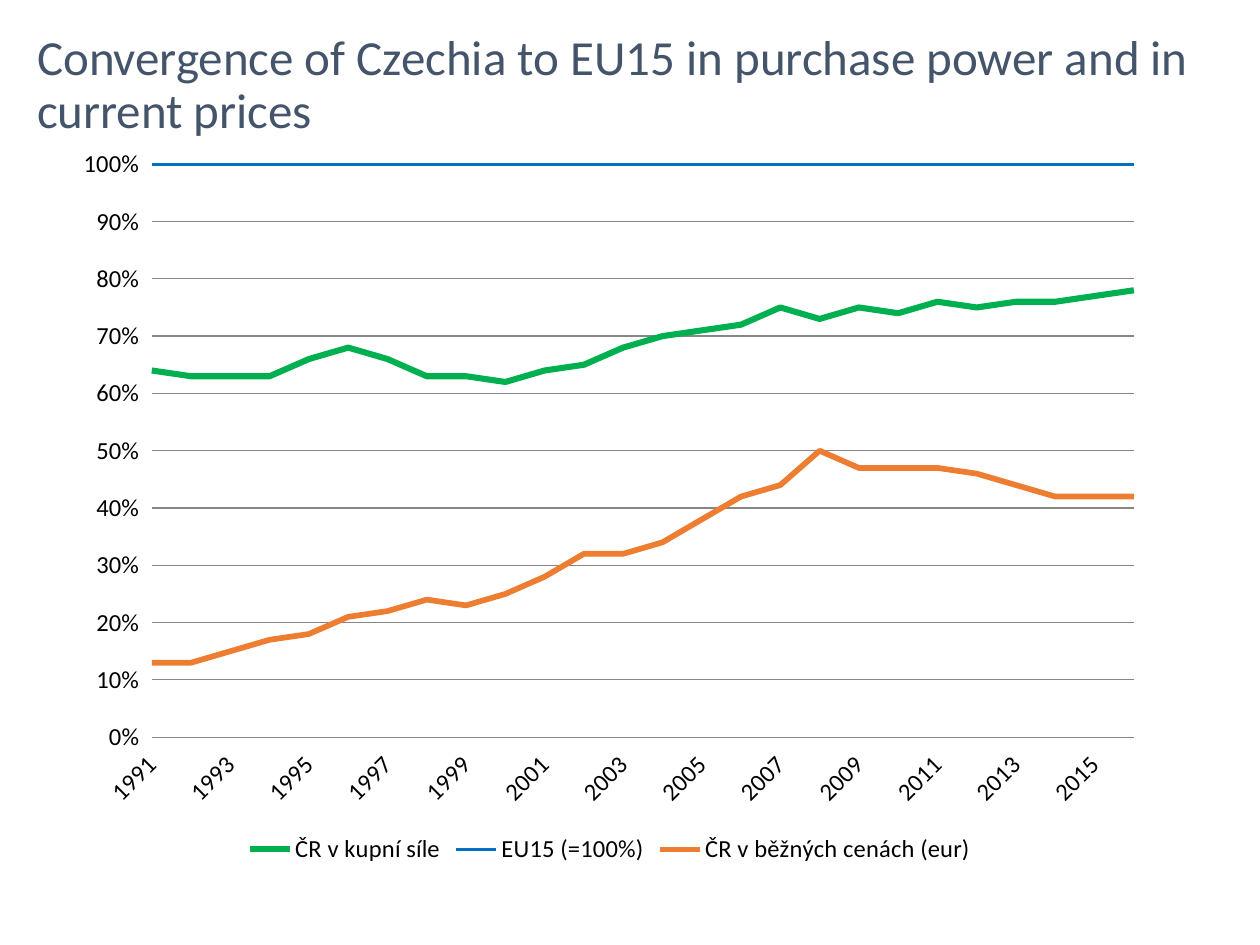
from pptx import Presentation
from pptx.chart.data import CategoryChartData
from pptx.dml.color import RGBColor as RGB
from pptx.enum.chart import XL_CHART_TYPE as CT, XL_LEGEND_POSITION as LP, XL_TICK_MARK as TM
from pptx.enum.text import MSO_ANCHOR
from pptx.oxml import parse_xml
from pptx.oxml.ns import nsdecls, qn
from pptx.util import Cm, Pt

# Content
TITLE = "Convergence of Czechia to EU15 in purchase power and in current prices"
YEARS = [str(y) for y in range(1991, 2017)]
# name, colour key, line width in points, share of EU15 in percent
SERIES = [
    ("ČR v kupní síle", "power", 3.5,
     [64, 63, 63, 63, 66, 68, 66, 63, 63, 62, 64, 65, 68,
      70, 71, 72, 75, 73, 75, 74, 76, 75, 76, 76, 77, 78]),
    ("EU15 (=100%)", "eu", 1.5, [100] * len(YEARS)),
    ("ČR v běžných cenách (eur)", "prices", 3.25,
     [13, 13, 15, 17, 18, 21, 22, 24, 23, 25, 28, 32, 32,
      34, 38, 42, 44, 50, 47, 47, 47, 46, 44, 42, 42, 42]),
]

THEME = {
    "font": "Calibri", "title_size": Pt(28), "chart_size": Pt(14),
    "title": RGB(0x44, 0x54, 0x6A), "text": RGB(0, 0, 0), "grid": RGB(0x86, 0x86, 0x86),
    "power": RGB(0x00, 0xB0, 0x50), "eu": RGB(0x00, 0x70, 0xC0),
    "prices": RGB(0xED, 0x7D, 0x31),
}
PLOT = {"x": 0.08, "y": 0.04, "w": 0.9, "h": 0.78}  # fractions of the chart area


def set_all(obj, values):
    for name, value in values.items():
        setattr(obj, name, value)


def set_font(font, size, color):
    set_all(font, {"name": THEME["font"], "size": THEME[size], "bold": False})
    font.color.rgb = THEME[color]


prs = Presentation()
prs.slide_width, prs.slide_height = Cm(25.4), Cm(19.05)
s = prs.slides.add_slide(prs.slide_layouts[6])

# Title
tf = s.shapes.add_textbox(Cm(0.5), Cm(0.76), Cm(24.6), Cm(1.96)).text_frame
set_all(tf, {"word_wrap": True, "vertical_anchor": MSO_ANCHOR.MIDDLE})
p = tf.paragraphs[0]
p.line_spacing = 0.9
r = p.add_run()
r.text = TITLE
set_font(r.font, "title_size", "title")

# Line chart
data = CategoryChartData(number_format="0%")
data.categories = YEARS
for name, _, _, percents in SERIES:
    data.add_series(name, [v / 100 for v in percents])
chart = s.shapes.add_chart(CT.LINE, Cm(1.3), Cm(2.72), Cm(22), Cm(14.81), data).chart
set_all(chart, {"has_title": False, "has_legend": True})
set_all(chart.legend, {"position": LP.BOTTOM, "include_in_layout": False})
set_font(chart.font, "chart_size", "text")

plot = chart.plots[0]
plot.vary_by_categories = False
for ser, (_, color, width, _) in zip(plot.series, SERIES):
    ser.smooth = False
    ser.format.line.width = Pt(width)
    ser.format.line.color.rgb = THEME[color]

# Axes
cat, val = chart.category_axis, chart.value_axis
for axis in (cat, val):
    axis.major_tick_mark = TM.OUTSIDE
    axis.format.line.fill.background()
set_all(val, {"minimum_scale": 0, "maximum_scale": 1, "major_unit": 0.1,
              "has_major_gridlines": True})
set_all(val.tick_labels, {"number_format": "0%", "number_format_is_linked": False})
grid = val.major_gridlines.format.line
grid.width = Pt(0.75)
grid.color.rgb = THEME["grid"]

# Lines start on the axis; every second year is labelled at a slant
val._element.find(qn("c:majorUnit")).addprevious(
    parse_xml(f'<c:crossBetween {nsdecls("c")} val="midCat"/>'))
set_font(cat.tick_labels.font, "chart_size", "text")
cat._element.find(qn("c:txPr")).find(qn("a:bodyPr")).set("rot", "-2700000")
cat._element.find(qn("c:lblOffset")).addnext(
    parse_xml(f'<c:tickLblSkip {nsdecls("c")} val="2"/>'))

# Fixed plot area
area = chart._chartSpace.chart.plotArea
for old in area.findall(qn("c:layout")):
    area.remove(old)
modes = "".join(f'<c:{k}Mode val="edge"/>' for k in "xy")
sides = "".join(f'<c:{k} val="{v}"/>' for k, v in PLOT.items())
area.insert(0, parse_xml(
    f'<c:layout {nsdecls("c")}><c:manualLayout><c:layoutTarget val="inner"/>'
    f'{modes}{sides}</c:manualLayout></c:layout>'))

prs.save("out.pptx")
